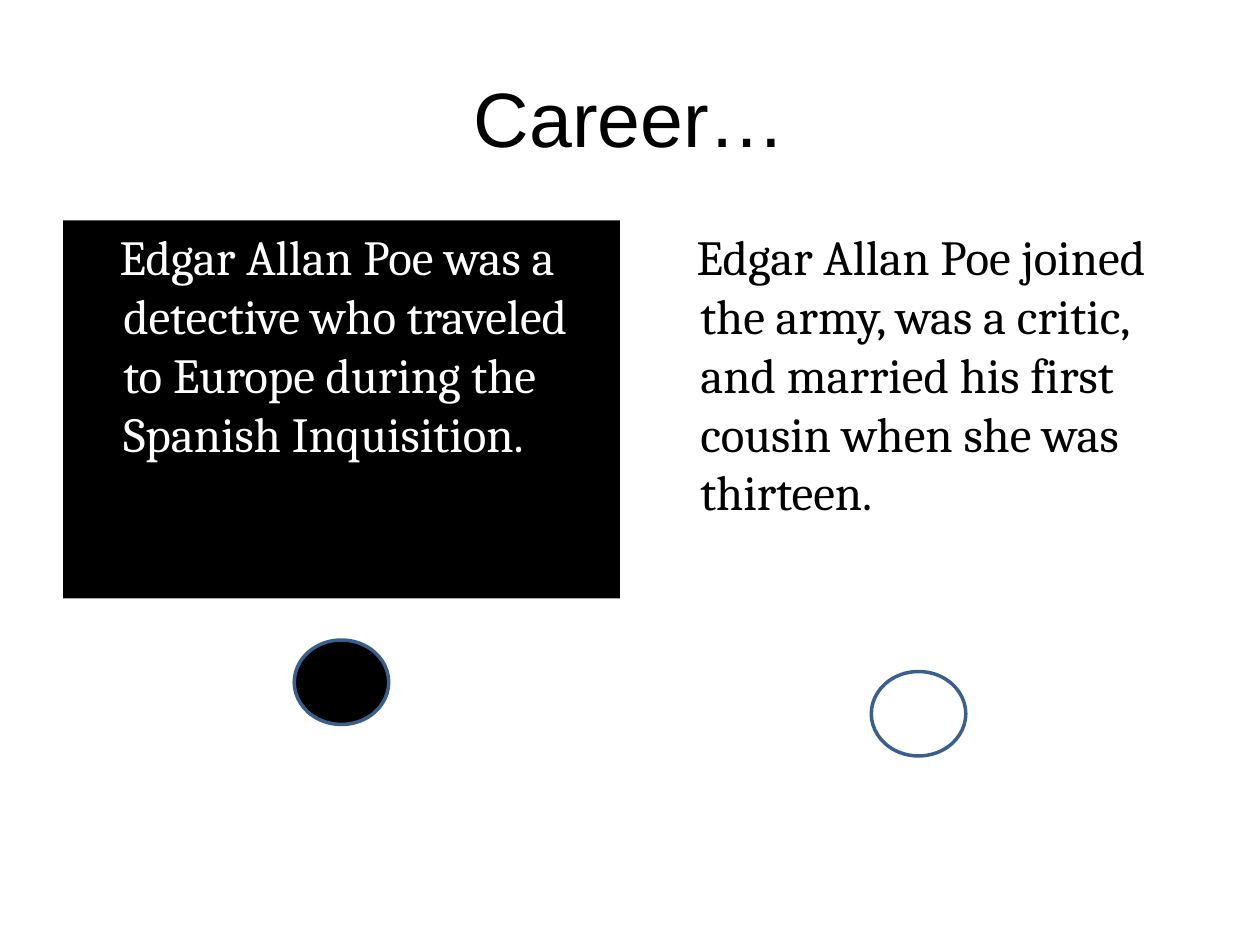
import dataclasses

import pptx
import pptx.dml.color
import pptx.enum.shapes
import pptx.enum.text
import pptx.util

Inches = pptx.util.Inches
Pt = pptx.util.Pt
ShapeType = pptx.enum.shapes.MSO_SHAPE


@dataclasses.dataclass(frozen=True)
class Theme:
    black: str = "000000"
    white: str = "FFFFFF"
    outline: str = "3A5F8C"
    title_font: str = "Arial"
    body_font: str = "Cambria"
    title_size: int = 44
    body_size: int = 28
    outline_width: int = 2


class SlideBuilder:
    def __init__(self, slide, theme):
        self.slide = slide
        self.theme = theme

    def color(self, value):
        return pptx.dml.color.RGBColor.from_string(value)

    def style_font(self, paragraph, name, size, color):
        for run in paragraph.runs:
            run.font.name = name
            run.font.size = Pt(size)
            run.font.color.rgb = self.color(color)

    def filled_shape(self, kind, left, top, width, height, fill):
        shape = self.slide.shapes.add_shape(
            kind, Inches(left), Inches(top), Inches(width), Inches(height))
        shape.shadow.inherit = False
        shape.fill.solid()
        shape.fill.fore_color.rgb = self.color(fill)
        return shape

    def title(self, text, left, top, width, height):
        box = self.slide.shapes.add_textbox(
            Inches(left), Inches(top), Inches(width), Inches(height))
        frame = box.text_frame
        frame.word_wrap = True
        frame.vertical_anchor = pptx.enum.text.MSO_ANCHOR.MIDDLE
        frame.text = text
        paragraph = frame.paragraphs[0]
        paragraph.alignment = pptx.enum.text.PP_ALIGN.CENTER
        self.style_font(paragraph, self.theme.title_font,
                        self.theme.title_size, self.theme.black)

    def panel(self, text, left, top, width, height, fill, text_color):
        shape = self.filled_shape(ShapeType.RECTANGLE, left, top, width, height, fill)
        shape.line.fill.background()
        frame = shape.text_frame
        frame.word_wrap = True
        frame.vertical_anchor = pptx.enum.text.MSO_ANCHOR.TOP
        frame.text = text
        paragraph = frame.paragraphs[0]
        paragraph.alignment = pptx.enum.text.PP_ALIGN.LEFT
        # The first line hangs slightly to the left of the others
        properties = paragraph._p.get_or_add_pPr()
        properties.set("marL", str(Inches(0.38)))
        properties.set("indent", str(Inches(-0.03)))
        self.style_font(paragraph, self.theme.body_font,
                        self.theme.body_size, text_color)

    def marker(self, center, top, fill, width=0.75, height=0.67):
        shape = self.filled_shape(
            ShapeType.OVAL, center - width / 2, top, width, height, fill)
        shape.line.color.rgb = self.color(self.theme.outline)
        shape.line.width = Pt(self.theme.outline_width)


def main():
    presentation = pptx.Presentation()
    presentation.slide_width = Inches(10)
    presentation.slide_height = Inches(7.5)
    slide = presentation.slides.add_slide(presentation.slide_layouts[6])
    theme = Theme()
    builder = SlideBuilder(slide, theme)

    # Title
    builder.title("Career…", 0.5, 0.3, 9, 1.25)

    # Two statements, each with a marker centred below it
    panel_top, panel_width = 1.75, 4.42
    statements = [
        ("Edgar Allan Poe was a detective who traveled to Europe "
         "during the Spanish Inquisition.",
         0.5, 3, 5.08, theme.black, theme.white),
        ("Edgar Allan Poe joined the army, was a critic, and married "
         "his first cousin when she was thirteen.",
         5.08, 3.33, 5.33, theme.white, theme.black),
    ]
    for text, left, height, marker_top, fill, text_color in statements:
        builder.panel(text, left, panel_top, panel_width, height, fill, text_color)
        builder.marker(left + panel_width / 2, marker_top, fill)

    presentation.save("out.pptx")


if __name__ == "__main__":
    main()
